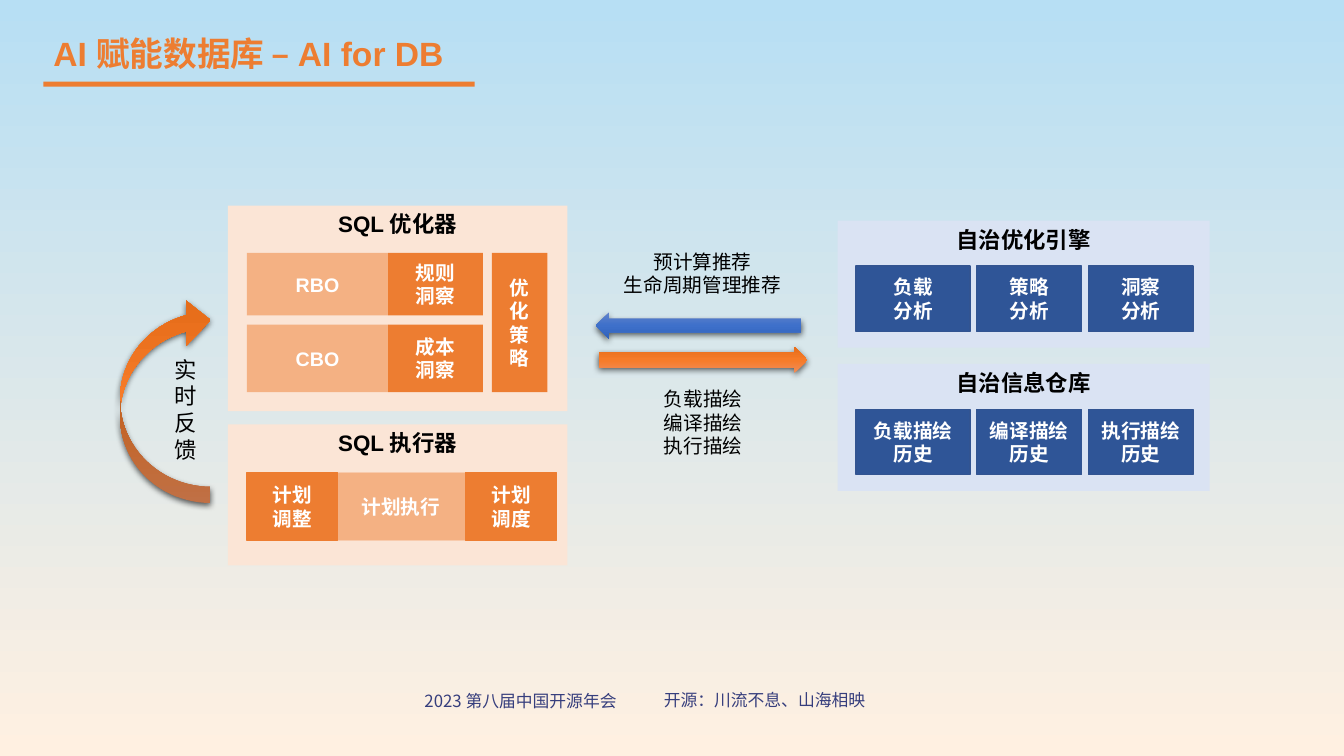
from lxml.etree import SubElement
from pptx import Presentation
from pptx.dml.color import RGBColor
from pptx.enum.shapes import MSO_SHAPE
from pptx.enum.text import MSO_ANCHOR, MSO_AUTO_SIZE, PP_ALIGN
from pptx.oxml.ns import qn
from pptx.util import Inches, Pt

# Grid of 160 columns by 90 rows with square cells
COLUMNS, ROWS = 160, 90
SLIDE_WIDTH, SLIDE_HEIGHT = Inches(13.333), Inches(7.5)
LATIN, CHINESE = "Arial", "Noto Sans CJK SC"
LINE_HEIGHT = 1.2

ORANGE, LIGHT_ORANGE, PALE_ORANGE = "ED7D31", "F4B183", "FBE5D6"
NAVY, PALE_BLUE = "2F5597", "DAE3F3"
BLUE_SHADES = ("6183CB", "3E70CA", "3062BB")
ORANGE_SHADES = ("F18C57", "F67B28", "E56C19")


def rgb(value):
    return RGBColor.from_string(value)


def grid(left, top, width, height):
    column, row = SLIDE_WIDTH / COLUMNS, SLIDE_HEIGHT / ROWS
    return [round(length) for length in
            (left * column, top * row, width * column, height * row)]


def write(shape, text, size=14, color="FFFFFF", bold=False, font=LATIN,
          align=PP_ALIGN.CENTER, anchor=MSO_ANCHOR.TOP, wrap=True):
    frame = shape.text_frame
    frame.word_wrap = wrap
    frame.auto_size = MSO_AUTO_SIZE.NONE
    frame.vertical_anchor = anchor
    frame.text = text
    for paragraph in frame.paragraphs:
        paragraph.alignment = align
        paragraph.line_spacing = Pt(size * LINE_HEIGHT)
        for run in paragraph.runs:
            run.font.size = Pt(size)
            run.font.bold = bold
            run.font.color.rgb = rgb(color)
            run.font.name = font
            SubElement(run.font._element, qn("a:ea"), typeface=CHINESE)


def add_gradient(fill, element, colors):
    """Spread the colours evenly from top to bottom."""
    fill.gradient()
    fill.gradient_angle = 270
    stops = next(element.iter(qn("a:gsLst")))
    for stop in list(stops):
        stops.remove(stop)
    for index, color in enumerate(colors):
        position = index * 100000 // (len(colors) - 1)
        stop = SubElement(stops, qn("a:gs"), pos=str(position))
        SubElement(stop, qn("a:srgbClr"), val=color)


def add_label(slide, box, text, **text_format):
    write(slide.shapes.add_textbox(*grid(*box)), text, **text_format)


def add_block(slide, box, fill, line=None):
    block = slide.shapes.add_shape(MSO_SHAPE.RECTANGLE, *grid(*box))
    block.shadow.inherit = False
    block.fill.solid()
    block.fill.fore_color.rgb = rgb(fill)
    if line:
        block.line.color.rgb = rgb(line)
        block.line.width = Pt(1)
    else:
        block.line.fill.background()
    return block


def add_panel(slide, box, fill, heading, font=LATIN):
    write(add_block(slide, box, fill), heading, size=16, color="000000",
          bold=True, font=font)


def add_card(slide, box, text, fill, line=None, font=LATIN):
    write(add_block(slide, box, fill, line), text, bold=True, font=font,
          anchor=MSO_ANCHOR.MIDDLE)


def add_arrow(slide, kind, box, colors, rotation=0, adjustments=()):
    arrow = slide.shapes.add_shape(kind, *grid(*box))
    arrow.rotation = rotation
    for index, value in enumerate(adjustments):
        arrow.adjustments[index] = value
    add_gradient(arrow.fill, arrow._element, colors)
    arrow.line.fill.background()
    # Soft shadow below the arrow
    arrow.shadow.inherit = False
    effects = arrow._element.spPr.find(qn("a:effectLst"))
    shadow = SubElement(effects, qn("a:outerShdw"), blurRad=str(Pt(4.5)),
                        dist=str(Pt(1.5)), dir="5400000", rotWithShape="0")
    shade = SubElement(shadow, qn("a:srgbClr"), val="000000")
    SubElement(shade, qn("a:alpha"), val="63000")


def add_title(slide, text):
    title = slide.shapes.title
    title.left, title.top, title.width, title.height = grid(5.16, 3.36, 51.48, 6)
    write(title, text, size=24, color=ORANGE, bold=True,
          align=PP_ALIGN.LEFT, wrap=False)
    add_block(slide, (5.16, 9.72, 51.36, 0.6), ORANGE)


def add_autonomy_panels(slide):
    left, gap, widths = 99.72, 0.8, (13.56, 12.48, 12.48)
    panels = [
        (26.28, "自治优化引擎", ("负载\n分析", "策略\n分析", "洞察\n分析")),
        (43.32, "自治信息仓库", ("负载描绘历史", "编译描绘历史", "执行描绘历史")),
    ]
    for top, heading, cards in panels:
        add_panel(slide, (left, top, 44.28, 15.12), PALE_BLUE, heading, CHINESE)
        card_left = left + 2.2
        for text, width in zip(cards, widths):
            add_card(slide, (card_left, top + 5.4, width, 7.8), text, NAVY,
                     line="325491", font=CHINESE)
            card_left += width + gap


def add_optimizer(slide):
    add_panel(slide, (27.12, 24.48, 40.44, 24.48), PALE_ORANGE, "SQL 优化器")
    for top, height, method, insight in [(30.12, 7.44, "RBO", "规则\n洞察"),
                                         (38.64, 8.04, "CBO", "成本\n洞察")]:
        add_card(slide, (29.4, top, 16.8, height), method, LIGHT_ORANGE)
        add_card(slide, (46.2, top, 11.28, height), insight, ORANGE)
    add_card(slide, (58.56, 30.12, 6.6, 16.56), "优化策略", ORANGE)


def add_executor(slide):
    add_panel(slide, (27.12, 50.52, 40.44, 16.8), PALE_ORANGE, "SQL 执行器")
    for left, width, text, fill, line in [
        (39.96, 15.48, "计划执行", LIGHT_ORANGE, "F8CBAD"),
        (29.4, 10.8, "计划\n调整", ORANGE, ORANGE),
        (55.44, 10.8, "计划\n调度", ORANGE, ORANGE),
    ]:
        add_card(slide, (left, 56.28, width, 8.04), text, fill, line)


def add_exchange(slide):
    add_arrow(slide, MSO_SHAPE.LEFT_ARROW, (70.92, 37.2, 24.48, 3.12),
              BLUE_SHADES)
    add_arrow(slide, MSO_SHAPE.LEFT_ARROW, (71.28, 41.28, 24.84, 3.12),
              ORANGE_SHADES, rotation=180, adjustments=(0.57, 0.5))
    add_label(slide, (69.96, 29.16, 27.36, 6.84),
              "预计算推荐\n生命周期管理推荐", color="000000", font=CHINESE)
    add_label(slide, (74.16, 45.48, 19.08, 9.72),
              "负载描绘\n编译描绘\n执行描绘", color="000000", font=CHINESE)


def add_feedback(slide):
    add_arrow(slide, MSO_SHAPE.CURVED_LEFT_ARROW, (14.28, 35.4, 10.8, 24.48),
              ORANGE_SHADES, rotation=180, adjustments=(0.18, 0.5, 0.27))
    add_label(slide, (19.56, 41.76, 5.52, 14.16), "实时反馈", size=16,
              color="000000", align=PP_ALIGN.LEFT)


def add_footer(slide):
    for box, text in [((45.48, 81.6, 33, 3.6), "2023 第八届中国开源年会"),
                      ((76.56, 81.48, 28.92, 3.6), "开源：川流不息、山海相映")]:
        add_label(slide, box, text, size=12, color="363E7D", font=CHINESE)


def main():
    presentation = Presentation()
    presentation.slide_width = SLIDE_WIDTH
    presentation.slide_height = SLIDE_HEIGHT
    slide = presentation.slides.add_slide(presentation.slide_layouts[5])
    add_gradient(slide.background.fill, slide._element, ("B7DFF4", "FFF0E1"))

    add_footer(slide)
    add_title(slide, "AI 赋能数据库 – AI for DB")
    add_autonomy_panels(slide)
    add_exchange(slide)
    add_optimizer(slide)
    add_feedback(slide)
    add_executor(slide)
    presentation.save("out.pptx")


if __name__ == "__main__":
    main()
